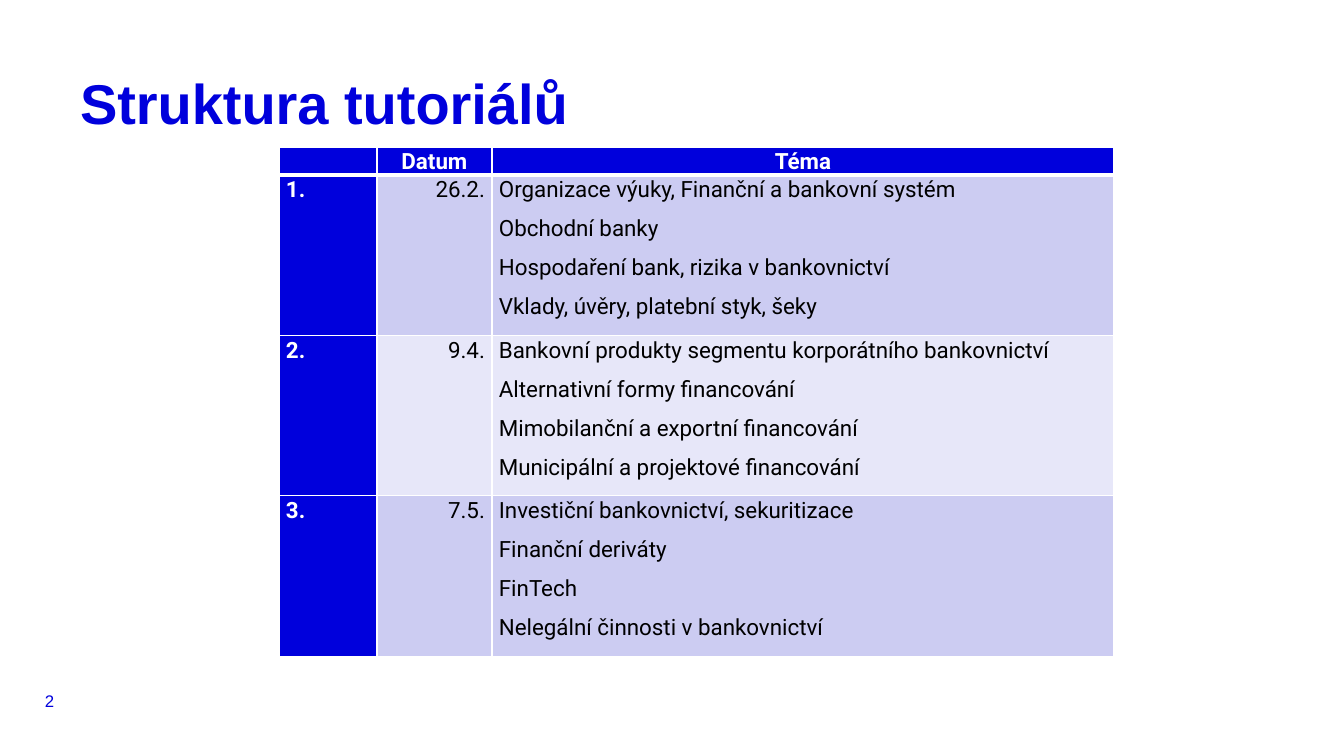
from lxml import etree
from pptx import Presentation
from pptx.dml.color import RGBColor
from pptx.enum.text import MSO_ANCHOR, PP_ALIGN
from pptx.oxml.ns import qn
from pptx.util import Emu, Pt

PX = 914400 / 100.8
LEFT, CENTER, RIGHT = PP_ALIGN.LEFT, PP_ALIGN.CENTER, PP_ALIGN.RIGHT
TOP, MIDDLE = MSO_ANCHOR.TOP, MSO_ANCHOR.MIDDLE
BLUE, WHITE, BLACK = "0000DC", "FFFFFF", "000000"
BANDS = ("CCCCF2", "E7E7F9")

COLUMN_WIDTHS = (98, 115, 622)
ROW_HEIGHTS = (27, 161, 160, 161)
HEADINGS = ("", "Datum", "Téma")
TUTORIALS = (
    ("26.2.", ("Organizace výuky, Finanční a bankovní systém",
               "Obchodní banky",
               "Hospodaření bank, rizika v bankovnictví",
               "Vklady, úvěry, platební styk, šeky")),
    ("9.4.", ("Bankovní produkty segmentu korporátního bankovnictví",
              "Alternativní formy financování",
              "Mimobilanční a exportní financování",
              "Municipální a projektové financování")),
    ("7.5.", ("Investiční bankovnictví, sekuritizace",
              "Finanční deriváty",
              "FinTech",
              "Nelegální činnosti v bankovnictví")),
)


def px(length):
    return Emu(round(length * PX))


def color(value):
    return RGBColor.from_string(value)


def add_run(paragraph, text, size, font_name, font_color, bold=False):
    run = paragraph.add_run()
    run.text = text
    run.font.size = Pt(size)
    run.font.name = font_name
    run.font.bold = bold
    run.font.color.rgb = color(font_color)


def prepare_frame(frame, anchor, wrap):
    frame.margin_left = frame.margin_right = 0
    frame.margin_top = frame.margin_bottom = 0
    frame.vertical_anchor = anchor
    frame.word_wrap = wrap


def set_title(slide, text):
    title = slide.shapes.title
    title.left, title.top, title.width, title.height = map(px, (80, 80, 1185, 49))
    prepare_frame(title.text_frame, TOP, True)
    paragraph = title.text_frame.paragraphs[0]
    paragraph.alignment = LEFT
    paragraph.line_spacing = Pt(40)
    add_run(paragraph, text, 40, "Arial", BLUE, True)


def add_slide_number(slide, number):
    box = slide.shapes.add_textbox(*map(px, (45, 687, 28, 28)))
    prepare_frame(box.text_frame, MIDDLE, False)
    add_run(box.text_frame.paragraphs[0], number, 12, "Arial", BLUE)


def set_borders(cell, bottom_width):
    """Draw white lines around the cell; they must precede its fill in the XML."""
    properties = cell._tc.get_or_add_tcPr()
    for side, width in (("L", 1), ("R", 1), ("T", 1), ("B", bottom_width)):
        line = etree.SubElement(properties, qn(f"a:ln{side}"), w=str(Pt(width)))
        fill = etree.SubElement(line, qn("a:solidFill"))
        etree.SubElement(fill, qn("a:srgbClr"), val=WHITE)


def fill_cell(cell, lines, fill, font_color, alignment=LEFT, bold=False, bottom_width=1):
    set_borders(cell, bottom_width)
    cell.fill.solid()
    cell.fill.fore_color.rgb = color(fill)
    cell.margin_left = cell.margin_right = px(7)
    cell.margin_top = cell.margin_bottom = 0
    frame = cell.text_frame
    for index, text in enumerate(lines):
        paragraph = frame.add_paragraph() if index else frame.paragraphs[0]
        paragraph.alignment = alignment
        paragraph.line_spacing = 1.07
        paragraph.space_after = Pt(8)
        if text:
            add_run(paragraph, text, 16, "Roboto", font_color, bold)
        else:
            etree.SubElement(paragraph._p, qn("a:endParaRPr"), sz="1600")


def add_schedule(slide):
    frame = slide.shapes.add_table(
        len(ROW_HEIGHTS), len(COLUMN_WIDTHS),
        px(279), px(147), px(sum(COLUMN_WIDTHS)), px(sum(ROW_HEIGHTS)))
    table = frame.table
    for column, width in zip(table.columns, COLUMN_WIDTHS):
        column.width = px(width)
    for row, height in zip(table.rows, ROW_HEIGHTS):
        row.height = px(height)
    for index, heading in enumerate(HEADINGS):
        fill_cell(table.cell(0, index), [heading], BLUE, WHITE, CENTER, True, 3)
    for number, (date, topics) in enumerate(TUTORIALS, 1):
        band = BANDS[(number - 1) % 2]
        fill_cell(table.cell(number, 0), [f"{number}."], BLUE, WHITE, bold=True)
        fill_cell(table.cell(number, 1), [date], band, BLACK, RIGHT)
        fill_cell(table.cell(number, 2), topics, band, BLACK)


def main():
    presentation = Presentation()
    presentation.slide_width, presentation.slide_height = px(1344), px(756)
    slide = presentation.slides.add_slide(presentation.slide_layouts[5])
    set_title(slide, "Struktura tutoriálů")
    add_schedule(slide)
    add_slide_number(slide, "2")
    presentation.save("out.pptx")


if __name__ == "__main__":
    main()
